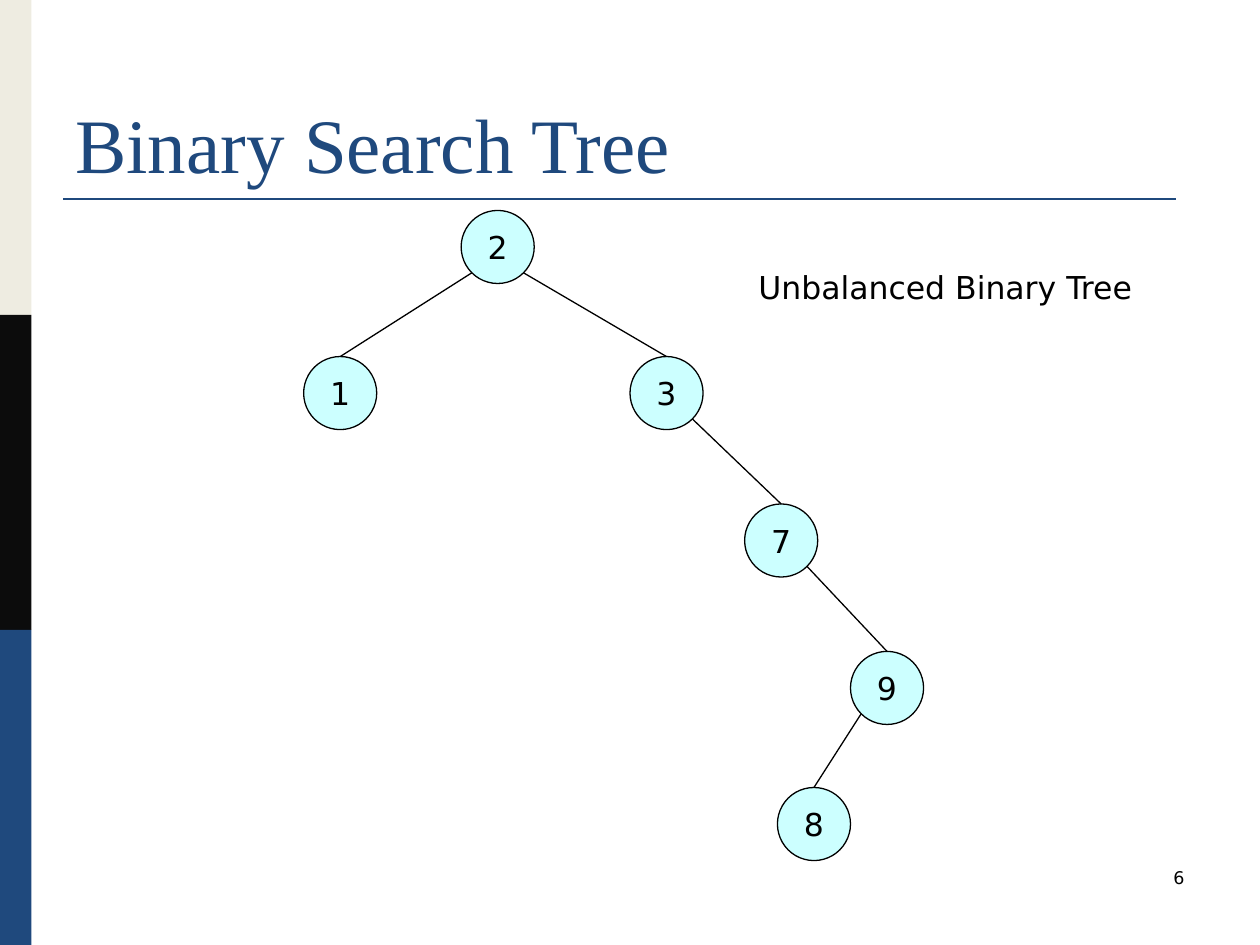
import math

from lxml import etree
from pptx import Presentation
from pptx.dml.color import RGBColor
from pptx.enum import shapes, text
from pptx.oxml.ns import qn
from pptx.util import Inches, Pt

BLUE, BLACK, BEIGE, NEAR_BLACK, CYAN = "1F497D", "000000", "EEECE1", "0C0C0C", "CCFFFF"
SANS, SERIF = "DejaVu Sans", "Times New Roman"
NODE_SIZE = 0.58

# Node value: (left, top, parent value)
TREE = {
    "2": (3.66, 1.67, None),
    "1": (2.41, 2.83, "2"),
    "3": (5, 2.83, "2"),
    "7": (5.91, 4, "3"),
    "9": (6.75, 5.17, "7"),
    "8": (6.17, 6.25, "9"),
}


def color(hex_value):
    return RGBColor.from_string(hex_value)


def write(shape, content, size, font=SANS, hex_color=BLACK,
          align=text.PP_ALIGN.LEFT, anchor=text.MSO_ANCHOR.TOP, wrap=True):
    frame = shape.text_frame
    frame.text = content
    frame.word_wrap = wrap
    frame.vertical_anchor = anchor
    paragraph = frame.paragraphs[0]
    paragraph.alignment = align
    run_font = paragraph.runs[0].font
    run_font.name = font
    run_font.size = Pt(size)
    run_font.color.rgb = color(hex_color)


def add_text(slide, box, content, size, **style):
    write(slide.shapes.add_textbox(*map(Inches, box)), content, size, **style)


def add_filled(slide, kind, box, fill):
    shape = slide.shapes.add_shape(kind, *map(Inches, box))
    shape.shadow.inherit = False
    shape.fill.solid()
    shape.fill.fore_color.rgb = color(fill)
    shape.line.fill.background()
    return shape


def add_line(slide, start, end, hex_color=BLACK, width=0.75):
    line = slide.shapes.add_connector(
        shapes.MSO_CONNECTOR.STRAIGHT, *map(Inches, (*start, *end)))
    line.line.color.rgb = color(hex_color)
    line.line.width = Pt(width)
    etree.SubElement(line.element.spPr, qn("a:effectLst"))


def add_node(slide, value):
    left, top, _ = TREE[value]
    node = add_filled(slide, shapes.MSO_SHAPE.OVAL,
                      (left, top, NODE_SIZE, NODE_SIZE), CYAN)
    node.line.color.rgb = color(BLACK)
    node.line.width = Pt(0.75)
    write(node, value, 18, align=text.PP_ALIGN.CENTER,
          anchor=text.MSO_ANCHOR.MIDDLE, wrap=False)


def add_edge(slide, value):
    """Join a node's top to the lower diagonal point of its parent."""
    left, top, parent = TREE[value]
    parent_left, parent_top, _ = TREE[parent]
    radius = NODE_SIZE / 2
    offset = radius * math.sqrt(0.5)
    side = 1 if left > parent_left else -1
    start = (parent_left + radius + side * offset, parent_top + radius + offset)
    add_line(slide, start, (left + radius, top))


def add_frame(slide):
    """Draw the side bands and the rule under the title."""
    for index, fill in enumerate((BEIGE, NEAR_BLACK, BLUE)):
        add_filled(slide, shapes.MSO_SHAPE.RECTANGLE,
                   (0, 2.5 * index, 0.25, 2.5), fill)
    add_line(slide, (0.5, 1.58), (9.33, 1.58), BLUE, 1.5)


def main():
    presentation = Presentation()
    presentation.slide_width = Inches(10)
    presentation.slide_height = Inches(7.5)
    slide = presentation.slides.add_slide(presentation.slide_layouts[6])

    add_frame(slide)
    add_text(slide, (0.5, 0.3, 9, 1.25), "Binary Search Tree", 44, font=SERIF,
             hex_color=BLUE, anchor=text.MSO_ANCHOR.BOTTOM)
    add_text(slide, (7.17, 6.83, 2.33, 0.5), "6", 10, align=text.PP_ALIGN.RIGHT)
    for value, (_, _, parent) in TREE.items():
        add_node(slide, value)
        if parent:
            add_edge(slide, value)
    add_text(slide, (5.92, 2.08, 3.25, 0.4), "Unbalanced Binary Tree", 18)

    presentation.save("out.pptx")


if __name__ == "__main__":
    main()
